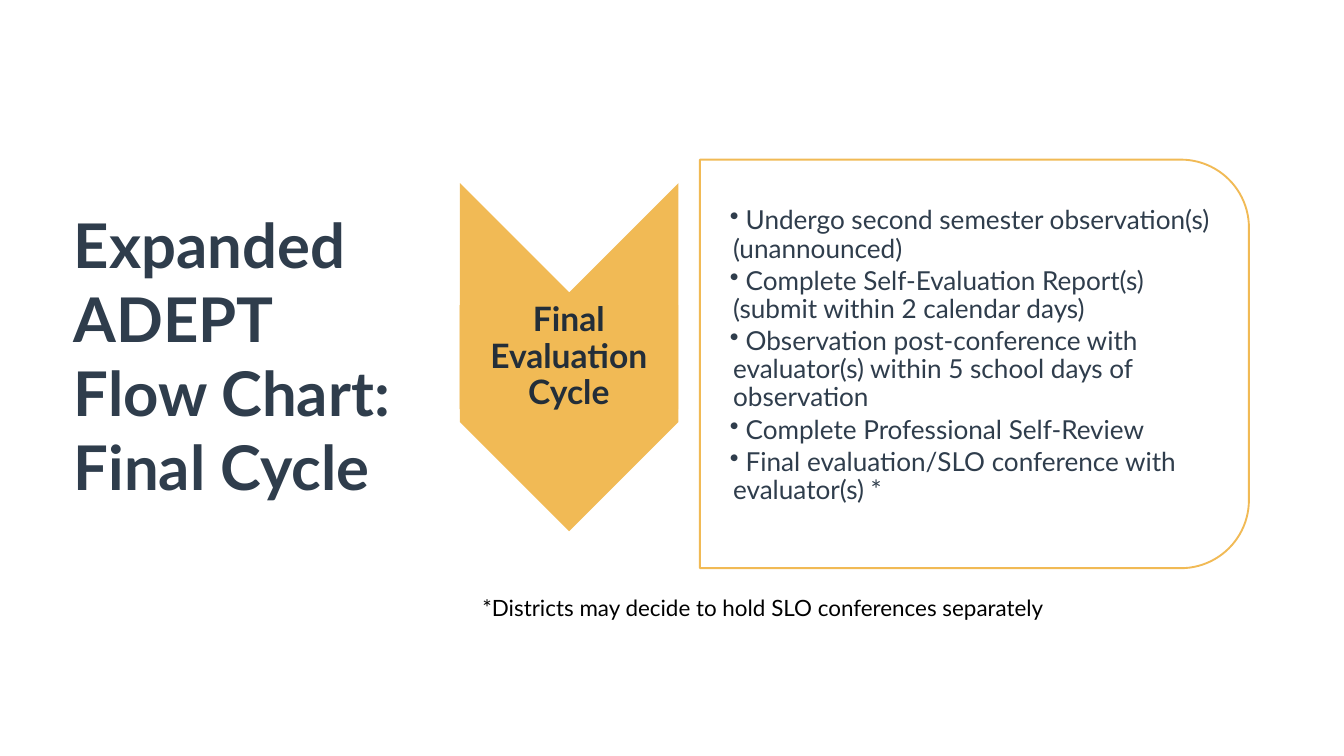
from pptx import Presentation
from pptx.dml.color import RGBColor
from pptx.enum.shapes import MSO_SHAPE
from pptx.enum.text import MSO_ANCHOR, PP_ALIGN
from pptx.oxml.ns import qn
from pptx.util import Inches, Pt
from lxml.etree import SubElement

GOLD = RGBColor(0xF1, 0xBA, 0x55)
SLATE = RGBColor(0x2F, 0x3D, 0x4C)
DARK_SLATE = RGBColor(0x23, 0x2E, 0x39)
WHITE = RGBColor(0xFF, 0xFF, 0xFF)
BLACK = RGBColor(0, 0, 0)

EVALUATION_STEPS = [
    "Undergo second semester observation(s) (unannounced)",
    "Complete Self-Evaluation Report(s) (submit within 2 calendar days)",
    "Observation post-conference with evaluator(s) within 5 school days of observation",
    "Complete Professional Self-Review",
    "Final evaluation/SLO conference with evaluator(s) *",
]


class SlideBuilder:
    font_name = "Lato"

    def __init__(self, slide):
        self.slide = slide

    def shape(self, kind, box, fill, line=None, rotation=0, opacity=100):
        shape = self.slide.shapes.add_shape(kind, *map(Inches, box))
        shape.shadow.inherit = False
        shape.rotation = rotation
        shape.fill.solid()
        shape.fill.fore_color.rgb = fill
        if opacity < 100:
            color = shape.element.spPr.find(qn("a:solidFill")).find(qn("a:srgbClr"))
            SubElement(color, qn("a:alpha"), val=str(opacity * 1000))
        if line is None:
            shape.line.fill.background()
        else:
            shape.line.color.rgb = line
            shape.line.width = Pt(2)
        return shape

    def text_box(self, box, lines, size, color, **style):
        shape = self.slide.shapes.add_textbox(*map(Inches, box))
        self.set_text(shape, lines, size, color, **style)

    def set_text(self, shape, lines, size, color, bold=False, align=PP_ALIGN.LEFT,
                 anchor=MSO_ANCHOR.MIDDLE, insets=(0.1, 0.05, 0.1, 0.05),
                 line_spacing=1.0, space_after=0, indent=0, bulleted=False):
        frame = shape.text_frame
        frame.word_wrap = True
        frame.vertical_anchor = anchor
        (frame.margin_left, frame.margin_top,
         frame.margin_right, frame.margin_bottom) = map(Inches, insets)
        frame.text = "\n".join(lines)
        for paragraph in frame.paragraphs:
            paragraph.alignment = align
            paragraph.line_spacing = line_spacing
            paragraph.space_after = Pt(space_after)
            properties = paragraph._p.get_or_add_pPr()
            properties.set("marL", str(Inches(indent)))
            if bulleted:
                properties.set("indent", str(-Inches(indent)))
                SubElement(properties, qn("a:buChar"), char="•")
            paragraph.font.name = self.font_name
            paragraph.font.size = Pt(size)
            paragraph.font.bold = bold
            paragraph.font.color.rgb = color


def main():
    presentation = Presentation()
    presentation.slide_width = Inches(20)
    presentation.slide_height = Inches(11.25)
    builder = SlideBuilder(presentation.slides.add_slide(presentation.slide_layouts[6]))

    builder.text_box((1, 1.38, 5.08, 7.8), ["Expanded ADEPT Flow Chart:\vFinal Cycle"],
                     66, SLATE, bold=True)

    builder.shape(MSO_SHAPE.CHEVRON, (5.88, 3.69, 5.18, 3.25), GOLD, rotation=90)
    label = builder.shape(MSO_SHAPE.RECTANGLE, (6.84, 4.54, 3.25, 1.55), GOLD)
    builder.set_text(label, ["Final Evaluation Cycle"], 36, DARK_SLATE, bold=True,
                     align=PP_ALIGN.CENTER, insets=(0.01,) * 4, line_spacing=0.9)

    builder.shape(MSO_SHAPE.ROUND_2_SAME_RECTANGLE, (11.46, 1.33, 6.08, 8.17), WHITE,
                  line=GOLD, rotation=90, opacity=90)
    builder.text_box((10.8, 2.71, 7.46, 5.18), [f" {step}" for step in EVALUATION_STEPS],
                     28, SLATE, insets=(0.06, 0.01, 0.01, 0.01), line_spacing=0.9,
                     space_after=4.2, indent=0.05, bulleted=True)

    builder.text_box((6.7, 8.79, 11.38, 0.5),
                     ["*Districts may decide to hold SLO conferences separately"],
                     24, BLACK, anchor=MSO_ANCHOR.TOP, space_after=7.5, indent=0.38)

    presentation.save("out.pptx")


if __name__ == "__main__":
    main()
